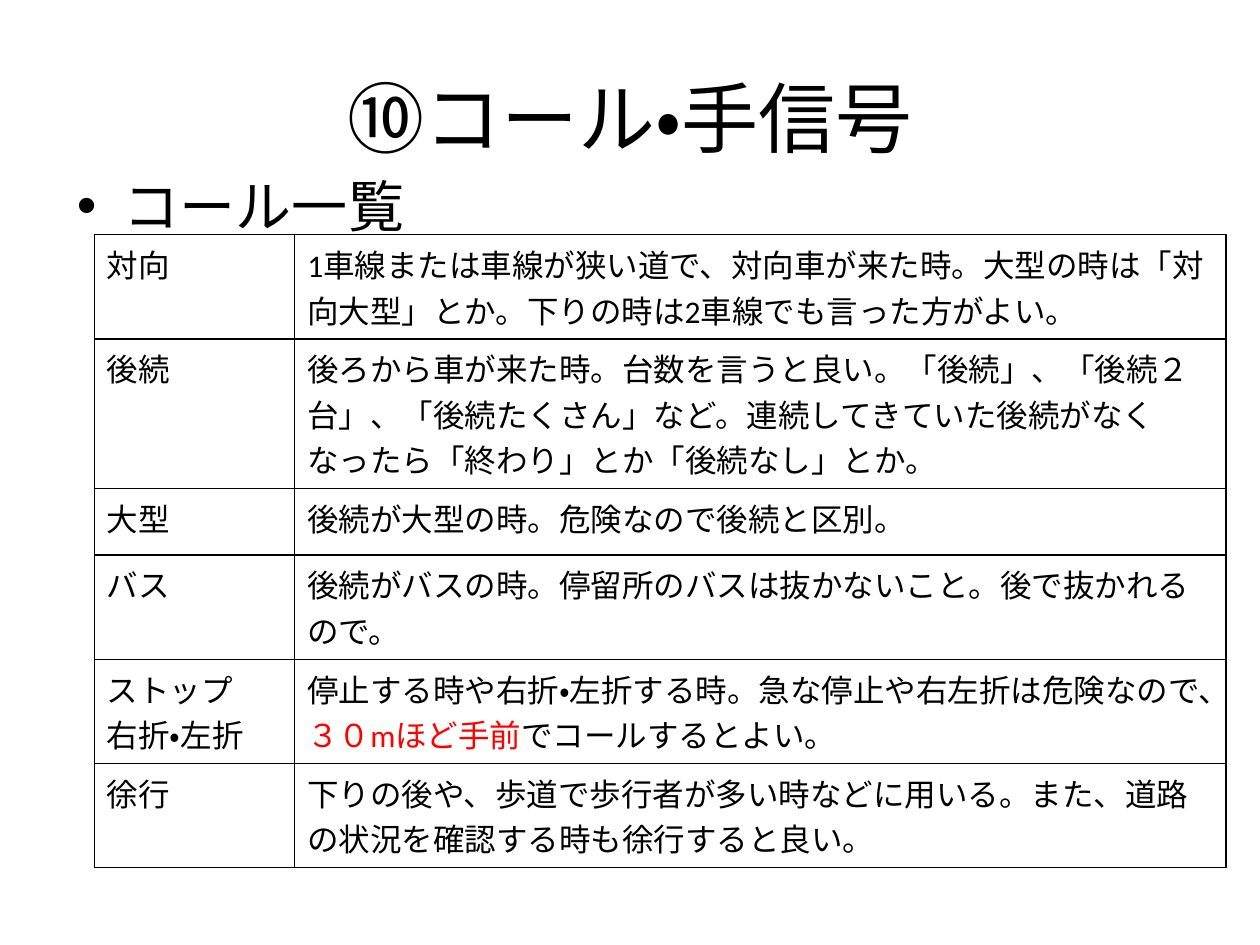
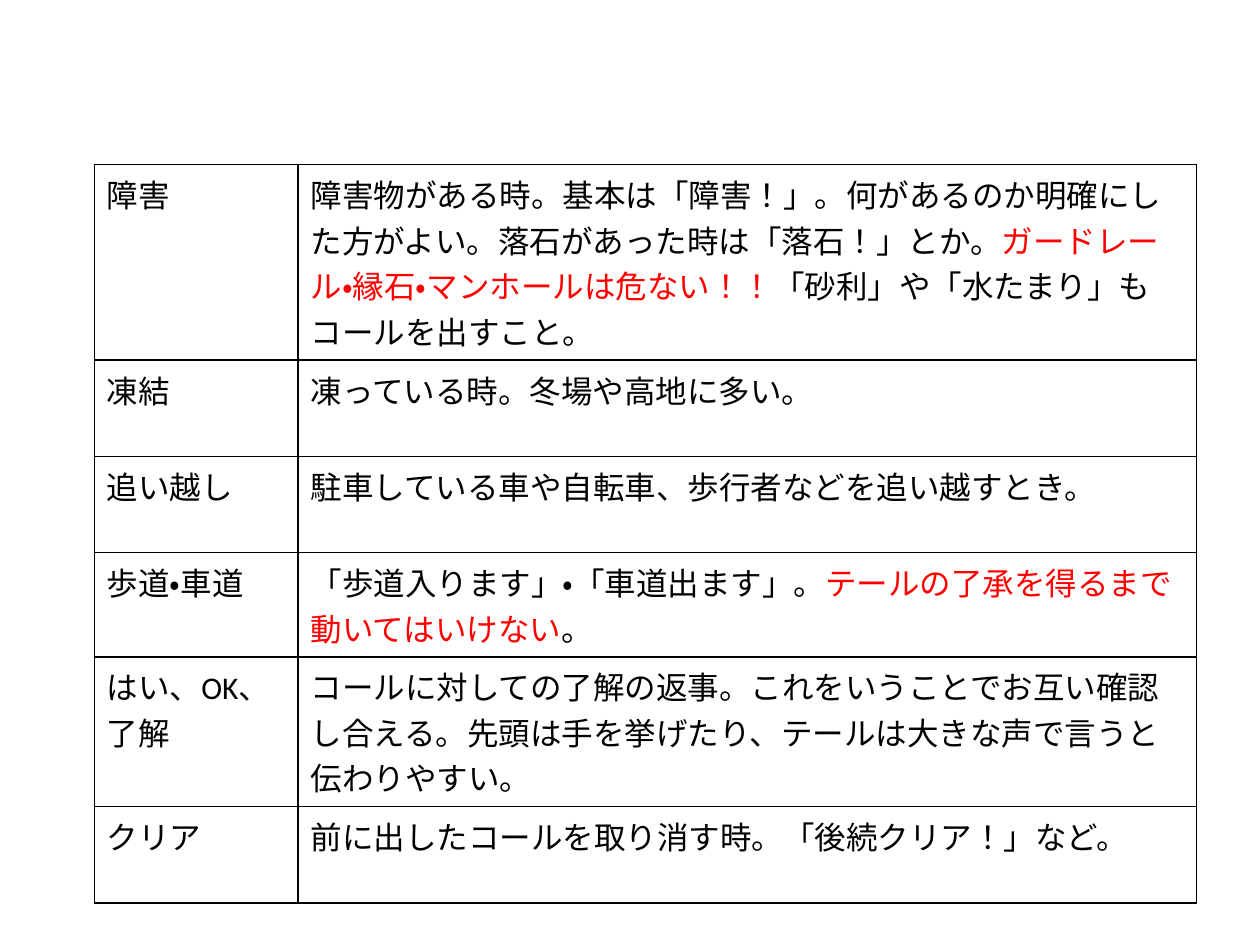
from dataclasses import dataclass

from lxml.etree import SubElement
from pptx import Presentation
from pptx.dml.color import RGBColor
from pptx.enum.lang import MSO_LANGUAGE_ID
from pptx.enum.text import MSO_ANCHOR, PP_ALIGN
from pptx.oxml.ns import qn
from pptx.slide import Slide
from pptx.table import _Cell
from pptx.text.text import TextFrame
from pptx.util import Cm, Pt

BLACK = RGBColor(0x00, 0x00, 0x00)
RED = RGBColor(0xFF, 0x00, 0x00)
FONT = "Calibri"
TITLE_SIZE, HEADING_SIZE, CELL_SIZE = Pt(44), Pt(32), Pt(18)
BORDER_WIDTH = Pt(1)
WARNING_MARK = "|"  # encloses the words shown in red

# Row heights in cm, by the lines of text they hold
ONE_LINE, ONE_LINE_ROOMY, TWO_LINES, THREE_LINES, FOUR_LINES = 1.34, 1.94, 2.1, 3.02, 3.94


@dataclass(frozen=True)
class Call:
    name: str
    meaning: str
    height: float


@dataclass(frozen=True)
class CallTable:
    top: float  # cm
    name_width: float
    meaning_width: float
    calls: tuple[Call, ...]
    left: float = 1.9


TRAFFIC_CALLS = CallTable(4.73, 4.04, 18.77, (
    Call("対向", "1車線または車線が狭い道で、対向車が来た時。大型の時は「対向大型」とか。"
         "下りの時は2車線でも言った方がよい。", TWO_LINES),
    Call("後続", "後ろから車が来た時。台数を言うと良い。「後続」、「後続２台」、「後続たくさん」など。"
         "連続してきていた後続がなくなったら「終わり」とか「後続なし」とか。", THREE_LINES),
    Call("大型", "後続が大型の時。危険なので後続と区別。", ONE_LINE),
    Call("バス", "後続がバスの時。停留所のバスは抜かないこと。後で抜かれるので。", TWO_LINES),
    Call("ストップ\n右折・左折", "停止する時や右折・左折する時。急な停止や右左折は危険なので、"
         "|３０mほど手前|でコールするとよい。", TWO_LINES),
    Call("徐行", "下りの後や、歩道で歩行者が多い時などに用いる。"
         "また、道路の状況を確認する時も徐行すると良い。", TWO_LINES),
))

ROAD_CALLS = CallTable(3.32, 4.11, 18.11, (
    Call("障害", "障害物がある時。基本は「障害！」。何があるのか明確にした方がよい。"
         "落石があった時は「落石！」とか。|ガードレール・縁石・マンホールは危ない！！|"
         "「砂利」や「水たまり」もコールを出すこと。", FOUR_LINES),
    Call("凍結", "凍っている時。冬場や高地に多い。", ONE_LINE_ROOMY),
    Call("追い越し", "駐車している車や自転車、歩行者などを追い越すとき。", ONE_LINE_ROOMY),
    Call("歩道・車道", "「歩道入ります」・「車道出ます」。"
         "|テールの了承を得るまで動いてはいけない|。", TWO_LINES),
    Call("はい、OK、了解", "コールに対しての了解の返事。これをいうことでお互い確認し合える。"
         "先頭は手を挙げたり、テールは大きな声で言うと伝わりやすい。", THREE_LINES),
    Call("クリア", "前に出したコールを取り消す時。「後続クリア！」など。", ONE_LINE_ROOMY),
))


def write_text(frame: TextFrame, text: str, size: Pt) -> None:
    """Write one paragraph per line, with the marked words in red."""
    frame.word_wrap = True
    for index, line in enumerate(text.split("\n")):
        paragraph = frame.add_paragraph() if index else frame.paragraphs[0]
        for part, words in enumerate(line.split(WARNING_MARK)):
            run = paragraph.add_run()
            run.text = words
            run.font.name = FONT
            run.font.size = size
            run.font.language_id = MSO_LANGUAGE_ID.JAPANESE
            run.font.color.rgb = RED if part % 2 else BLACK


def add_title(slide: Slide, text: str) -> None:
    title = slide.shapes.add_textbox(Cm(1.27), Cm(0.76), Cm(22.86), Cm(3.18)).text_frame
    write_text(title, text, TITLE_SIZE)
    title.vertical_anchor = MSO_ANCHOR.MIDDLE
    title.paragraphs[0].alignment = PP_ALIGN.CENTER


def add_bullet_heading(slide: Slide, text: str) -> None:
    heading = slide.shapes.add_textbox(Cm(1.3), Cm(3.33), Cm(22.86), Cm(12.57)).text_frame
    write_text(heading, text, HEADING_SIZE)
    paragraph = heading.paragraphs[0]
    paragraph.space_before = Pt(6.4)
    properties = paragraph._p.get_or_add_pPr()
    indent = Cm(0.95)
    properties.set("marL", str(indent))
    properties.set("indent", str(-indent))
    SubElement(properties, qn("a:buFont")).set("typeface", "Arial")
    SubElement(properties, qn("a:buChar")).set("char", "•")


def outline_cell(cell: _Cell) -> None:
    properties = cell._tc.get_or_add_tcPr()
    for side in ("lnL", "lnR", "lnT", "lnB"):
        line = SubElement(properties, qn(f"a:{side}"))
        line.set("w", str(BORDER_WIDTH))
        fill = SubElement(line, qn("a:solidFill"))
        SubElement(fill, qn("a:srgbClr")).set("val", str(BLACK))
    cell.fill.background()


def add_call_table(slide: Slide, content: CallTable) -> None:
    widths = (content.name_width, content.meaning_width)
    table = slide.shapes.add_table(
        len(content.calls), len(widths), Cm(content.left), Cm(content.top),
        Cm(sum(widths)), Cm(sum(call.height for call in content.calls))).table
    table.first_row = table.horz_banding = False
    for column, width in zip(table.columns, widths):
        column.width = Cm(width)
    for row, call in zip(table.rows, content.calls):
        row.height = Cm(call.height)
        for cell, text in zip(row.cells, (call.name, call.meaning)):
            outline_cell(cell)
            write_text(cell.text_frame, text, CELL_SIZE)


def main() -> None:
    deck = Presentation()
    deck.slide_width, deck.slide_height = Cm(25.4), Cm(19.05)
    blank = deck.slide_layouts[6]

    # Calls about traffic, with the title of the topic
    traffic = deck.slides.add_slide(blank)
    add_title(traffic, "⑩コール・手信号")
    add_bullet_heading(traffic, "コール一覧")
    add_call_table(traffic, TRAFFIC_CALLS)

    # Calls about the road and replies
    road = deck.slides.add_slide(blank)
    add_call_table(road, ROAD_CALLS)

    deck.save("out.pptx")


if __name__ == "__main__":
    main()
